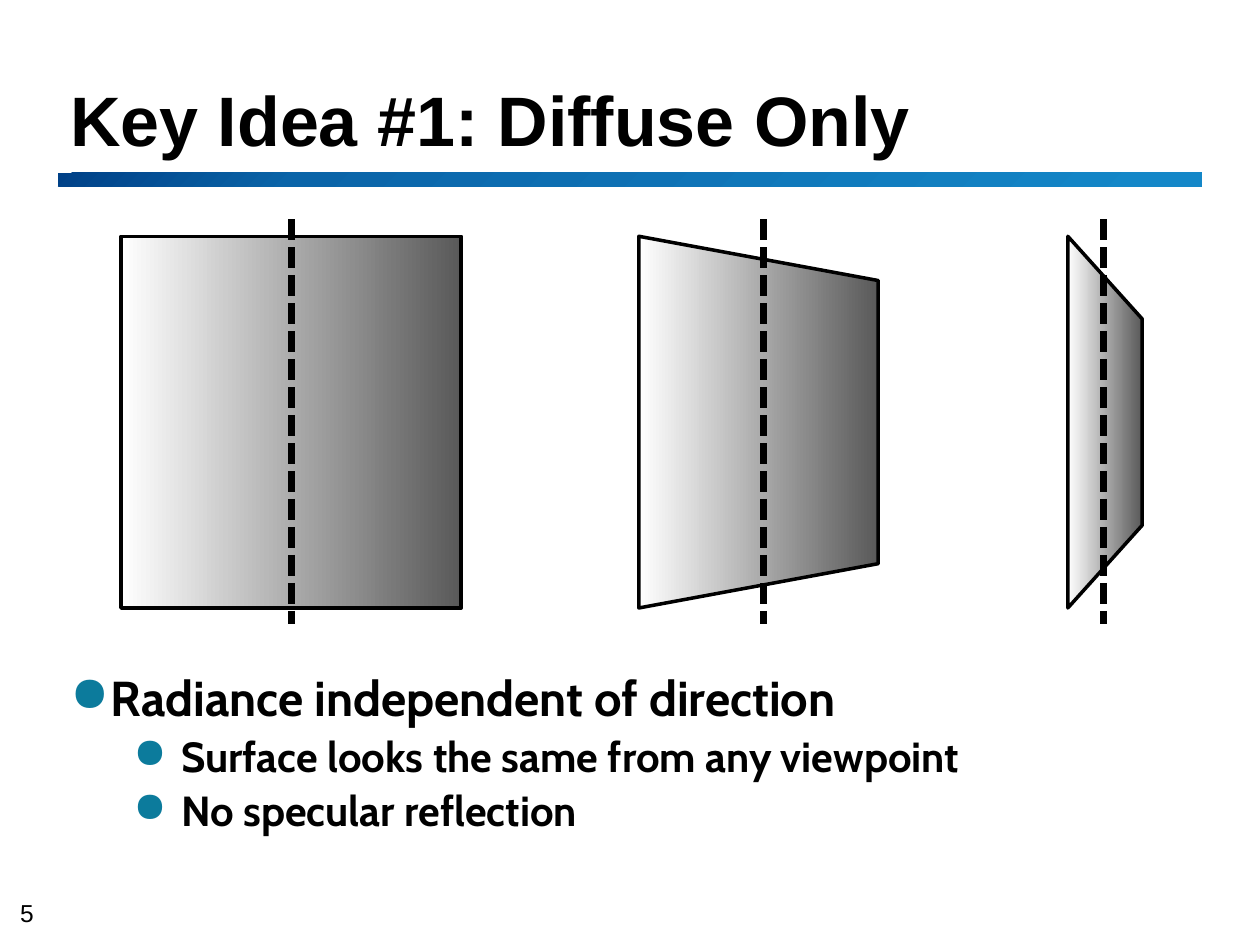
from copy import deepcopy

from lxml import etree
from pptx import Presentation
from pptx.dml.color import RGBColor
from pptx.enum import dml, shapes, text
from pptx.oxml.ns import qn
from pptx.util import Inches, Pt

BLACK = RGBColor(0, 0, 0)
WHITE = RGBColor(255, 255, 255)
DARK_GREY = RGBColor(0x59, 0x59, 0x59)
BULLET_TEAL = RGBColor(0x0C, 0x7B, 0x9C)
BAR_STOPS = [(0, RGBColor(0x00, 0x41, 0x87)),
             (0.21, RGBColor(0x0A, 0x64, 0xA8)),
             (0.96, RGBColor(0x14, 0x87, 0xC8))]
SURFACE_STOPS = [(0, DARK_GREY), (1, WHITE)]

TITLE = "Key Idea #1: Diffuse Only"
SLIDE_NUMBER = "5"
# text, level
BULLETS = [("Radiance independent of direction", 0),
           ("Surface looks the same from any viewpoint", 1),
           ("No specular reflection", 1)]
# size, left margin, hanging indent for each level
LEVELS = [(28, 0.32, 0.32), (24, 0.88, 0.38)]
# centre x, visible width, slant, x of the dashed axis
SURFACES = [(2.31, 2.7, 0, 2.31),
            (6.02, 1.9, 0.185, 6.06),
            (8.77, 0.59, 1.112, 8.76)]
SURFACE_HEIGHT = 2.95
SURFACE_MIDDLE = 3.35
AXIS_TOP, AXIS_BOTTOM = 1.74, 4.95
MARGIN = 0.46


def set_gradient(shape, stops, clockwise_angle):
    fill = shape.fill
    fill.gradient()
    fill.gradient_angle = 360 - clockwise_angle
    stop_list = fill.gradient_stops[0]._gs.getparent()
    while len(stop_list) < len(stops):
        stop_list.append(deepcopy(stop_list[-1]))
    for stop, (position, color) in zip(fill.gradient_stops, stops):
        stop.position = position
        stop.color.rgb = color


def add_shape(slide, kind, left, top, width, height):
    shape = slide.shapes.add_shape(
        kind, Inches(left), Inches(top), Inches(width), Inches(height))
    shape.shadow.inherit = False
    return shape


def add_text_box(slide, left, top, width, height, anchor, inset=True):
    box = slide.shapes.add_textbox(
        Inches(left), Inches(top), Inches(width), Inches(height))
    frame = box.text_frame
    frame.word_wrap = True
    frame.vertical_anchor = anchor
    frame.margin_left = frame.margin_right = Inches(0.1 if inset else 0)
    frame.margin_top = frame.margin_bottom = Inches(0.05 if inset else 0)
    return frame


def add_run(paragraph, words, font_name, size, bold=False):
    run = paragraph.add_run()
    run.text = words
    run.font.name = font_name
    run.font.size = Pt(size)
    run.font.bold = bold
    run.font.color.rgb = BLACK


def set_bullet(paragraph, margin, hanging):
    properties = paragraph._p.get_or_add_pPr()
    properties.set("marL", str(Inches(margin)))
    properties.set("indent", str(-Inches(hanging)))
    color = etree.SubElement(properties, qn("a:buClr"))
    etree.SubElement(color, qn("a:srgbClr"), val=str(BULLET_TEAL))
    etree.SubElement(properties, qn("a:buChar"), char="●")


def add_surface(slide, center, width, slant):
    """A trapezoid turned a quarter, so its narrow end faces right."""
    surface = add_shape(slide, shapes.MSO_SHAPE.TRAPEZOID,
                        center - SURFACE_HEIGHT / 2, SURFACE_MIDDLE - width / 2,
                        SURFACE_HEIGHT, width)
    surface.rotation = 90
    surface.adjustments[0] = slant
    set_gradient(surface, SURFACE_STOPS, 90)
    surface.line.color.rgb = BLACK
    surface.line.width = Pt(2)


def add_axis(slide, x):
    axis = slide.shapes.add_connector(
        shapes.MSO_CONNECTOR.STRAIGHT,
        Inches(x), Inches(AXIS_TOP), Inches(x), Inches(AXIS_BOTTOM))
    axis.line.color.rgb = BLACK
    axis.line.width = Pt(4)
    axis.line.dash_style = dml.MSO_LINE.SQUARE_DOT
    etree.SubElement(axis._element.spPr, qn("a:effectLst"))


def main():
    presentation = Presentation()
    presentation.slide_width = Inches(10)
    presentation.slide_height = Inches(7.5)
    slide = presentation.slides.add_slide(presentation.slide_layouts[6])

    number = add_text_box(slide, 0.16, 7.13, 0.28, 0.23,
                          text.MSO_ANCHOR.BOTTOM, inset=False)
    add_run(number.paragraphs[0], SLIDE_NUMBER, "Arial", 14)

    bar = add_shape(slide, shapes.MSO_SHAPE.RECTANGLE, MARGIN, 1.37, 9.08, 0.11)
    set_gradient(bar, BAR_STOPS, 45)
    bar.line.fill.background()

    title = add_text_box(slide, MARGIN, 0.33, 9.06, 0.99, text.MSO_ANCHOR.BOTTOM)
    title.paragraphs[0].line_spacing = Pt(36)
    add_run(title.paragraphs[0], TITLE, "Arial", 40, bold=True)

    body = add_text_box(slide, MARGIN, 5.34, 9.1, 1.94, text.MSO_ANCHOR.TOP)
    for index, (words, level) in enumerate(BULLETS):
        paragraph = body.add_paragraph() if index else body.paragraphs[0]
        size, margin, hanging = LEVELS[level]
        paragraph.level = level
        set_bullet(paragraph, margin, hanging)
        paragraph.line_spacing = Pt(27)
        paragraph.space_before = Pt(0)
        paragraph.space_after = Pt(4)
        add_run(paragraph, words, "Cabin", size, bold=True)

    for center, width, slant, _ in SURFACES:
        add_surface(slide, center, width, slant)
    for *_, axis_x in SURFACES:
        add_axis(slide, axis_x)

    presentation.save("out.pptx")


if __name__ == "__main__":
    main()
